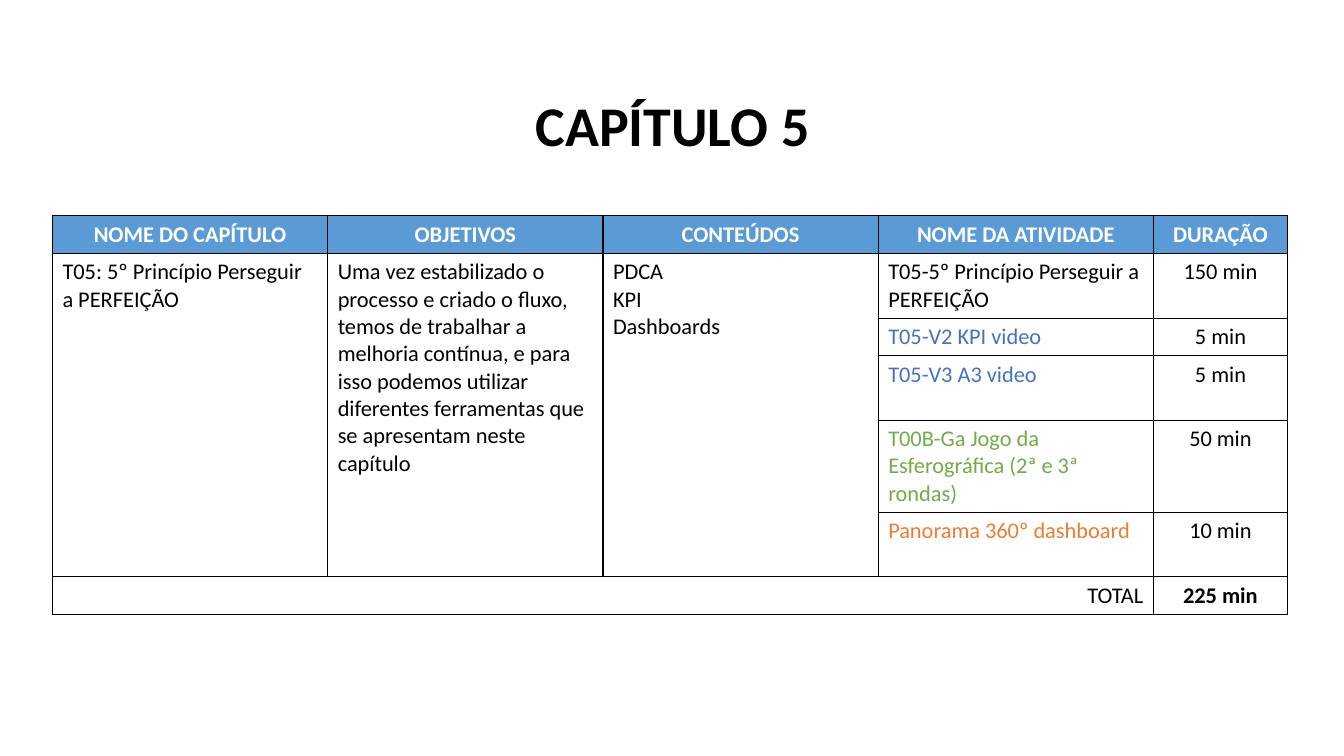
from lxml import etree
from pptx import Presentation
from pptx.dml.color import RGBColor
from pptx.enum.text import MSO_ANCHOR, PP_ALIGN
from pptx.oxml.ns import qn
from pptx.util import Inches, Pt

LEFT, CENTER, RIGHT = PP_ALIGN.LEFT, PP_ALIGN.CENTER, PP_ALIGN.RIGHT
TOP, MIDDLE = MSO_ANCHOR.TOP, MSO_ANCHOR.MIDDLE

FONT = "Calibri"
BLACK, WHITE, HEADER_BLUE = "000000", "FFFFFF", "5B9BD5"
BLUE, GREEN, ORANGE = "4472C4", "70AD47", "ED7D31"

TITLE = "CAPÍTULO 5"
HEADERS = ["NOME DO CAPÍTULO", "OBJETIVOS", "CONTEÚDOS", "NOME DA ATIVIDADE", "DURAÇÃO"]
CHAPTER = [
    "T05: 5º Princípio Perseguir a PERFEIÇÃO",
    "Uma vez estabilizado o processo e criado o fluxo, temos de trabalhar a "
    "melhoria contínua, e para isso podemos utilizar diferentes ferramentas "
    "que se apresentam neste capítulo",
    "PDCA\nKPI\nDashboards",
]
ACTIVITIES = [
    ("T05-5º Princípio Perseguir a PERFEIÇÃO", "150 min", BLACK),
    ("T05-V2 KPI video", "5 min", BLUE),
    ("T05-V3 A3 video", "5 min", BLUE),
    ("T00B-Ga Jogo da Esferográfica (2ª e 3ª rondas)", "50 min", GREEN),
    ("Panorama 360º dashboard", "10 min", ORANGE),
]
TOTAL = ("TOTAL", "225 min")

COLUMN_WIDTHS = [2.73, 2.73, 2.73, 2.73, 1.33]
ROW_HEIGHTS = [0.36, 0.64, 0.36, 0.64, 0.9, 0.64, 0.36]


def rgb(color):
    return RGBColor.from_string(color)


def format_paragraph(paragraph, size, color, bold, alignment):
    paragraph.alignment = alignment
    paragraph.font.name = FONT
    paragraph.font.size = Pt(size)
    paragraph.font.bold = bold
    paragraph.font.color.rgb = rgb(color)


def write_cell(cell, text, color=BLACK, bold=False, alignment=LEFT, anchor=TOP):
    cell.text = text
    cell.vertical_anchor = anchor
    for paragraph in cell.text_frame.paragraphs:
        format_paragraph(paragraph, 16, color, bold, alignment)


def style_cell(cell, fill_color):
    cell.fill.solid()
    cell.fill.fore_color.rgb = rgb(fill_color)
    properties = cell._tc.get_or_add_tcPr()
    for position, side in enumerate(("a:lnL", "a:lnR", "a:lnT", "a:lnB")):
        line = etree.Element(qn(side), w=str(Pt(1)))
        line_fill = etree.SubElement(line, qn("a:solidFill"))
        etree.SubElement(line_fill, qn("a:srgbClr"), val=BLACK)
        properties.insert(position, line)


def add_title(slide):
    title = slide.shapes.title
    title.left, title.top = Inches(2.51), Inches(0.85)
    title.width, title.height = Inches(8.32), Inches(0.77)
    title.text_frame.text = TITLE
    title.text_frame.vertical_anchor = TOP
    format_paragraph(title.text_frame.paragraphs[0], 40, BLACK, True, CENTER)


def add_chapter_table(slide):
    table = slide.shapes.add_table(
        len(ROW_HEIGHTS), len(COLUMN_WIDTHS), Inches(0.52), Inches(2.14),
        Inches(sum(COLUMN_WIDTHS)), Inches(sum(ROW_HEIGHTS)),
    ).table
    for column, width in zip(table.columns, COLUMN_WIDTHS):
        column.width = Inches(width)
    for row, height in zip(table.rows, ROW_HEIGHTS):
        row.height = Inches(height)

    total_row = len(ROW_HEIGHTS) - 1
    for row_index in range(total_row + 1):
        for cell in table.rows[row_index].cells:
            style_cell(cell, WHITE if row_index else HEADER_BLUE)

    for column_index, header in enumerate(HEADERS):
        write_cell(table.cell(0, column_index), header, WHITE, True, CENTER, MIDDLE)
    for column_index, text in enumerate(CHAPTER):
        cell = table.cell(1, column_index)
        cell.merge(table.cell(total_row - 1, column_index))
        write_cell(cell, text)
    for row_index, (activity, duration, color) in enumerate(ACTIVITIES, start=1):
        write_cell(table.cell(row_index, 3), activity, color)
        write_cell(table.cell(row_index, 4), duration, alignment=CENTER)

    label, duration = TOTAL
    table.cell(total_row, 0).merge(table.cell(total_row, 3))
    write_cell(table.cell(total_row, 0), label, alignment=RIGHT)
    write_cell(table.cell(total_row, 4), duration, bold=True, alignment=CENTER)


def main():
    presentation = Presentation()
    presentation.slide_width = Inches(13.33)
    presentation.slide_height = Inches(7.5)
    slide = presentation.slides.add_slide(presentation.slide_layouts[5])
    add_title(slide)
    add_chapter_table(slide)
    presentation.save("out.pptx")


if __name__ == "__main__":
    main()
